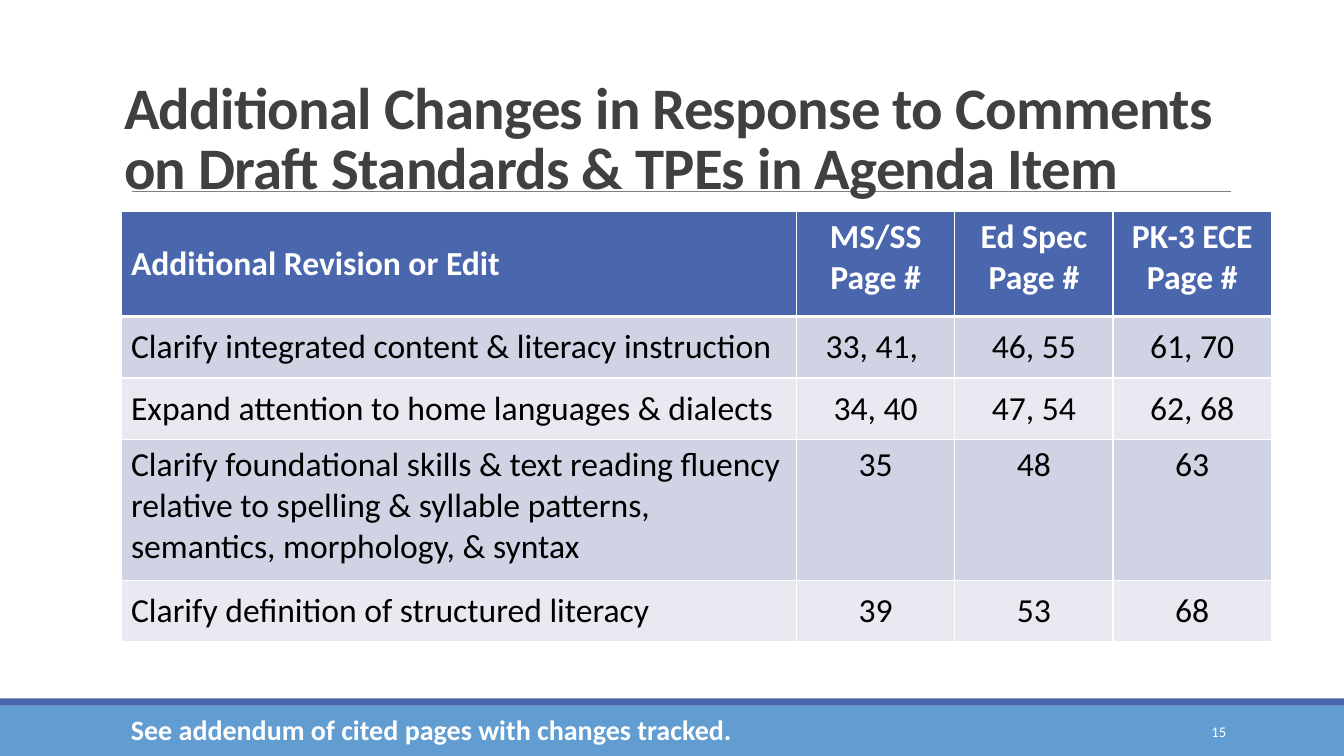
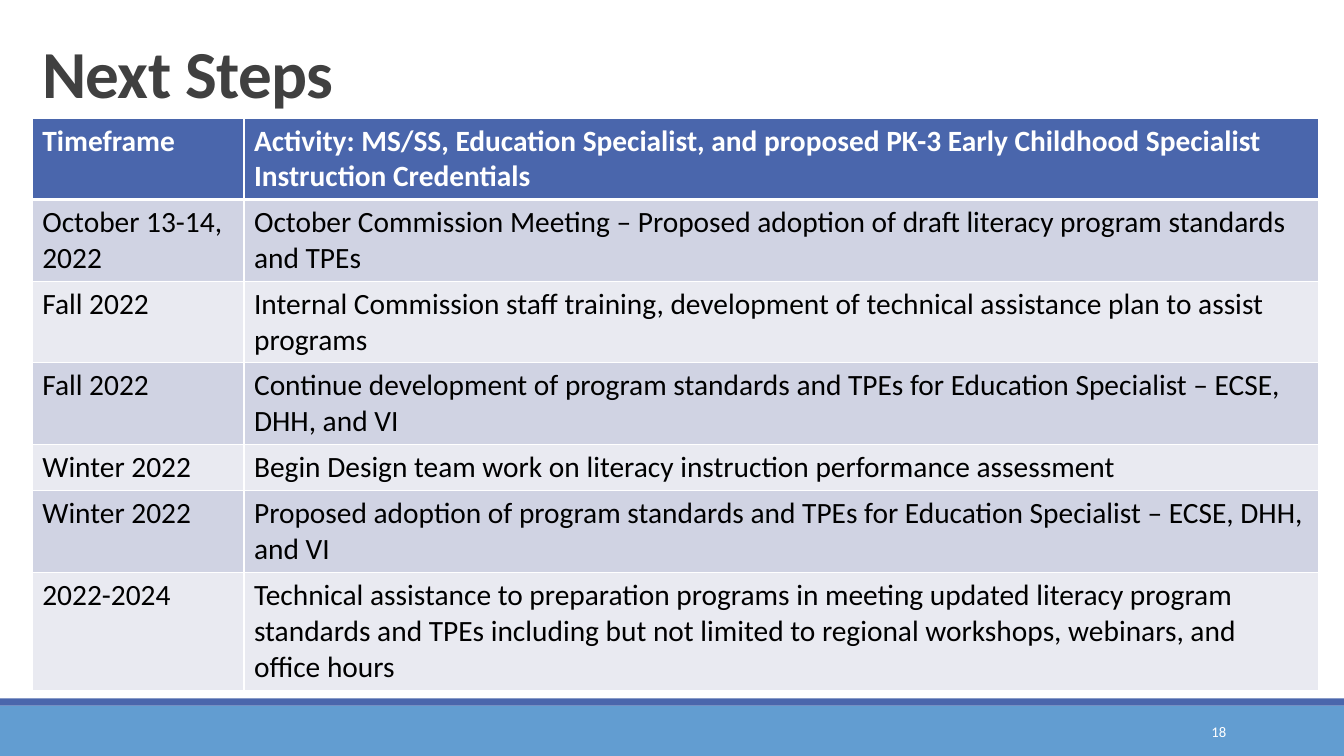
from lxml import etree
from pptx import Presentation
from pptx.dml.color import RGBColor
from pptx.enum import shapes, text
from pptx.oxml import ns
from pptx.util import Inches, Pt

BLUE = RGBColor(0x4A, 0x66, 0xAC)
LIGHT_BLUE = RGBColor(0x62, 0x9D, 0xD1)
GREY = RGBColor(0x80, 0x80, 0x80)
TITLE_GREY = RGBColor(0x40, 0x40, 0x40)
ROW_DARK = RGBColor(0xD0, 0xD3, 0xE3)
ROW_LIGHT = RGBColor(0xE9, 0xEA, 0xF1)
WHITE = RGBColor(0xFF, 0xFF, 0xFF)
BLACK = RGBColor(0, 0, 0)
FONT = "Calibri"
MIDDLE = text.MSO_ANCHOR.MIDDLE
LEFT, CENTER, RIGHT = text.PP_ALIGN.LEFT, text.PP_ALIGN.CENTER, text.PP_ALIGN.RIGHT

REVISIONS = [
    ("Additional Revision or Edit", "MS/SS Page #", "Ed Spec Page #", "PK-3 ECE Page #"),
    ("Clarify integrated content & literacy instruction", "33, 41, ", "46, 55", "61, 70"),
    ("Expand attention to home languages & dialects", "34, 40", "47, 54", "62, 68"),
    ("Clarify foundational skills & text reading fluency relative to spelling & "
     "syllable patterns, semantics, morphology, & syntax", "35", "48", "63"),
    ("Clarify definition of structured literacy", "39", "53", "68"),
]
STEPS = [
    ("Timeframe", "Activity: MS/SS, Education Specialist, and proposed PK-3 Early "
     "Childhood Specialist Instruction Credentials"),
    ("October 13-14, 2022", "October Commission Meeting – Proposed adoption of draft "
     "literacy program standards and TPEs"),
    ("Fall 2022", "Internal Commission staff training, development of technical "
     "assistance plan to assist programs"),
    ("Fall 2022", "Continue development of program standards and TPEs for Education "
     "Specialist – ECSE, DHH, and VI"),
    ("Winter 2022", "Begin Design team work on literacy instruction performance assessment"),
    ("Winter 2022", "Proposed adoption of program standards and TPEs for Education "
     "Specialist – ECSE, DHH, and VI"),
    ("2022-2024", "Technical assistance to preparation programs in meeting updated "
     "literacy program standards and TPEs including but not limited to regional "
     "workshops, webinars, and office hours"),
]


def set_text(tf, words, size, color, bold=False, align=LEFT):
    """Fill a text frame with one formatted paragraph and return it."""
    tf.text = words
    tf.word_wrap = True
    p = tf.paragraphs[0]
    p.alignment = align
    font = p.runs[0].font
    font.name, font.size, font.bold = FONT, Pt(size), bold
    font.color.rgb = color
    return p


def add_band(s, top, height, color):
    band = s.shapes.add_shape(shapes.MSO_SHAPE.RECTANGLE, 0, Inches(top),
                              Inches(13.33), Inches(height))
    band.shadow.inherit = False
    band.fill.solid()
    band.fill.fore_color.rgb = color
    band.line.fill.background()


def add_rule(s):
    rule = s.shapes.add_connector(shapes.MSO_CONNECTOR.STRAIGHT, Inches(1.31),
                                  Inches(1.9), Inches(12.21), Inches(1.9))
    rule.line.color.rgb = GREY
    rule.line.width = Pt(0.5)
    etree.SubElement(rule.element.spPr, ns.qn("a:effectLst"))
    return rule


def add_label(s, box, words, size, **style):
    tf = s.shapes.add_textbox(*map(Inches, box)).text_frame
    set_text(tf, words, size, WHITE, **style)
    return tf


def add_slide(prs, title, box, size, number):
    """Add a slide with the shared bands, rule, title style and slide number."""
    s = prs.slides.add_slide(prs.slide_layouts[5])
    add_band(s, 7, 0.5, LIGHT_BLUE)
    add_band(s, 6.93, 0.07, BLUE)
    rule = add_rule(s)

    sp = s.shapes.title
    rule.element.addnext(sp.element)  # the title lies above bands and rule
    sp.left, sp.top, sp.width, sp.height = map(Inches, box)
    tf = sp.text_frame
    tf.auto_size = text.MSO_AUTO_SIZE.NONE
    tf.vertical_anchor = text.MSO_ANCHOR.BOTTOM
    p = set_text(tf, title, size, TITLE_GREY, bold=True)
    p.line_spacing = 0.85
    p.runs[0].font._element.set("spc", "-50")

    tf = add_label(s, (10.83, 7.06, 1.43, 0.4), number, 10.5, align=RIGHT)
    tf.vertical_anchor = MIDDLE
    return s


def set_borders(cell, top, bottom):
    tcPr = cell._tc.get_or_add_tcPr()
    for side, width in (("L", 1), ("R", 1), ("T", top), ("B", bottom)):
        ln = etree.SubElement(tcPr, ns.qn(f"a:ln{side}"), w=str(Pt(width)))
        fill = etree.SubElement(ln, ns.qn("a:solidFill"))
        etree.SubElement(fill, ns.qn("a:srgbClr"), val=str(WHITE))


def add_grid(s, left, top, widths, heights, rows, size, numbers_align=LEFT):
    """Add a table with a blue header and alternating rows."""
    table = s.shapes.add_table(len(rows), len(widths), Inches(left), Inches(top),
                               Inches(sum(widths)), Inches(sum(heights))).table
    for column, width in zip(table.columns, widths):
        column.width = Inches(width)
    for i, (row, height) in enumerate(zip(rows, heights)):
        table.rows[i].height = Inches(height)
        header = i == 0
        color = BLUE if header else ROW_DARK if i % 2 else ROW_LIGHT
        for j, words in enumerate(row):
            cell = table.cell(i, j)
            set_borders(cell, 3 if i == 1 else 1, 3 if header else 1)
            cell.fill.solid()
            cell.fill.fore_color.rgb = color
            set_text(cell.text_frame, words, size, WHITE if header else BLACK,
                     bold=header, align=numbers_align if j else LEFT)
    return table


def build_changes(prs):
    s = add_slide(prs, "Additional Changes in Response to Comments on Draft Standards "
                  "& TPEs in Agenda Item", (1.13, 0.46, 11, 1.59), 42, "15")
    table = add_grid(s, 1.2, 2.1, [6.7] + [1.57] * 3, [1.04, 0.61, 0.61, 1.4, 0.61],
                     REVISIONS, 24, CENTER)
    table.cell(0, 0).vertical_anchor = MIDDLE
    for i in (1, 2, 4):
        for cell in table.rows[i].cells:
            cell.vertical_anchor = MIDDLE
    add_label(s, (1.2, 7.02, 9.47, 0.44),
              "See addendum of cited pages with changes tracked.", 20, bold=True)


def build_next_steps(prs):
    s = add_slide(prs, "Next Steps", (0.32, 0.3, 11, 0.86), 48, "18")
    add_grid(s, 0.32, 1.17, [2.1, 10.66], [0.81] * 4 + [0.46, 0.81, 1.17], STEPS, 21)


def main():
    prs = Presentation()
    prs.slide_width, prs.slide_height = Inches(13.33), Inches(7.5)
    build_changes(prs)
    build_next_steps(prs)
    prs.save("out.pptx")


if __name__ == "__main__":
    main()
